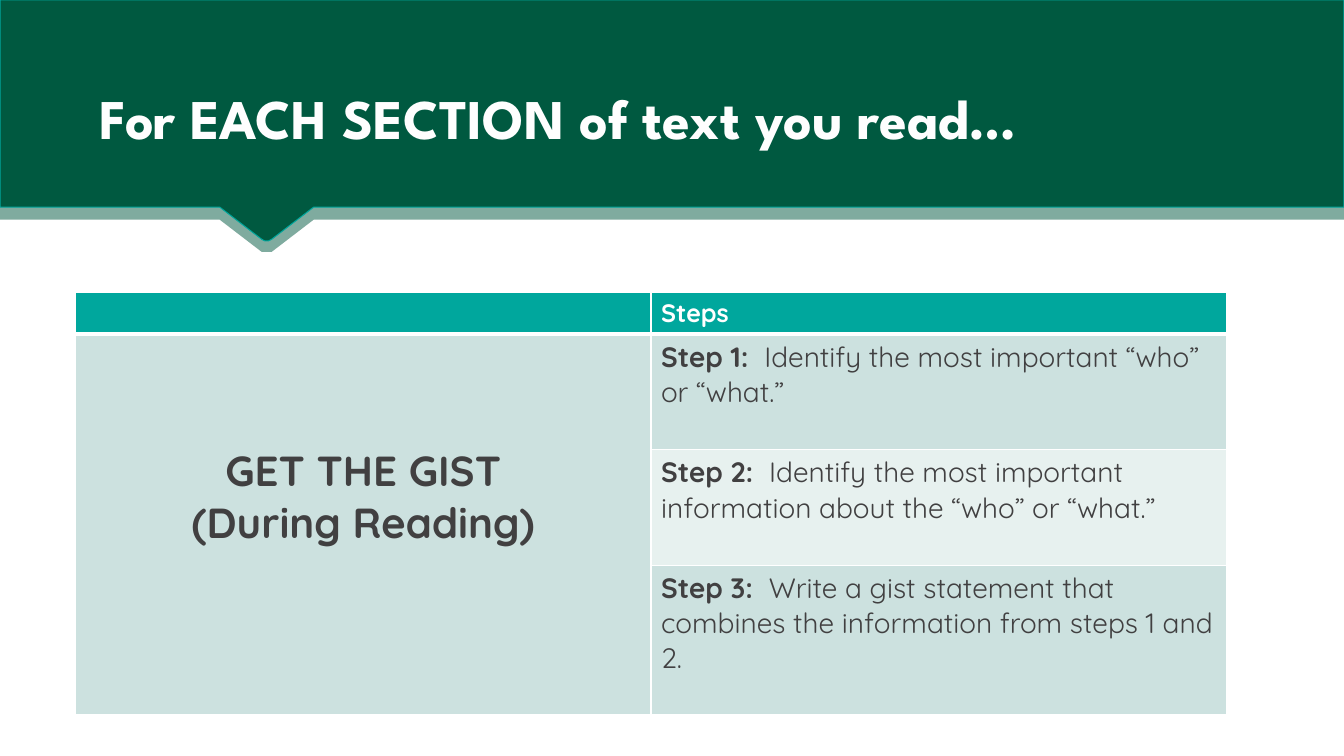
from lxml import etree
from pptx import Presentation
from pptx.dml.color import RGBColor
from pptx.enum import text
from pptx.oxml import ns
from pptx.util import Pt

GREEN, TEAL, INK, WHITE = "005940", "00A79D", "414041", "FFFFFF"
PALE, PALER = "CCE1DF", "E7F1EF"
STEPS = [
    "Identify the most important “who” or “what.”",
    "Identify the most important information about the “who” or “what.”",
    "Write a gist statement that combines the information from steps 1 and 2.",
]


def rgb(value):
    return RGBColor.from_string(value)


def add_xml(parent, tag, **attributes):
    return etree.SubElement(parent, ns.qn(tag), attributes)


def format_font(font, color, **values):
    font.color.rgb = rgb(color)
    for key, value in values.items():
        setattr(font, key, value)


def draw_banner(slide, box, color, alpha=100, outline=None):
    """Draw a full-width band with a rounded pointer below its lower edge."""
    left, top, width, height = box
    bottom, tip = top + height, top + height + 23.5
    notch = left + 190.5
    builder = slide.shapes.build_freeform(left, top, scale=Pt(1))
    builder.add_line_segments([
        (left, bottom), (notch - 33.5, bottom),
        (notch - 3.5, tip - 1), (notch - 1.2, tip), (notch + 1.2, tip),
        (notch + 3.5, tip - 1), (notch + 33.5, bottom),
        (left + width, bottom), (left + width, top),
    ])
    banner = builder.convert_to_shape()
    banner.shadow.inherit = False
    banner.fill.solid()
    banner.fill.fore_color.rgb = rgb(color)
    if alpha < 100:
        swatch = banner.fill._xPr.find(".//" + ns.qn("a:srgbClr"))
        add_xml(swatch, "a:alpha", val=str(alpha * 1000))
    if outline:
        banner.line.color.rgb = rgb(outline)
        banner.line.width = Pt(0.75)
    else:
        banner.line.fill.background()


def place_title(slide, box, wording):
    title = slide.shapes.title
    title.left, title.top, title.width, title.height = map(Pt, box)
    frame = title.text_frame
    frame.text = wording
    layout = {"vertical_anchor": text.MSO_ANCHOR.BOTTOM, "word_wrap": True,
              "auto_size": text.MSO_AUTO_SIZE.NONE}
    for key, value in layout.items():
        setattr(frame, key, value)
    heading = frame.paragraphs[0]
    heading.alignment = text.PP_ALIGN.LEFT
    run = heading.runs[0]
    format_font(run.font, "FEFEFE", name="League Spartan", size=Pt(40), bold=True)

    effects = etree.Element(ns.qn("a:effectLst"))
    shadow = add_xml(effects, "a:outerShdw", blurRad="38100", dist="38100", dir="2700000")
    add_xml(add_xml(shadow, "a:srgbClr", val="000000"), "a:alpha", val="43000")
    run.font.fill._xPr.find(ns.qn("a:solidFill")).addnext(effects)
    title._element.getparent().append(title._element)  # in front of the banner


def style_cell(cell, color, bottom=1, top=1):
    cell.fill.solid()
    cell.fill.fore_color.rgb = rgb(color)
    properties = cell._tc.get_or_add_tcPr()
    sides = {"a:lnL": 1, "a:lnR": 1, "a:lnT": top, "a:lnB": bottom}
    for position, (side, weight) in enumerate(sides.items()):
        border = etree.Element(ns.qn(side), w=str(Pt(weight)))
        add_xml(add_xml(border, "a:solidFill"), "a:srgbClr", val=WHITE)
        properties.insert(position, border)


def write_cell(cell, *parts, color=INK, size=20):
    """Write (wording, bold) parts into the first paragraph of the cell."""
    paragraph = cell.text_frame.paragraphs[0]
    for wording, bold in parts:
        run = paragraph.add_run()
        run.text = wording
        format_font(run.font, color, name="Quicksand", size=Pt(size), bold=bold)
    return paragraph


def draw_steps_table(slide, box):
    left, top, width, height = box
    row_heights = [29.5, 82.5, 82.5, height - 194.5]
    table = slide.shapes.add_table(4, 2, *map(Pt, box)).table
    table.first_row = table.horz_banding = False
    for column in table.columns:
        column.width = Pt(width / 2)
    for row, row_height in zip(table.rows, row_heights):
        row.height = Pt(row_height)

    for column in range(2):
        style_cell(table.cell(0, column), TEAL, bottom=3)
    write_cell(table.cell(0, 1), ("Steps", True), color=WHITE, size=18)

    stage = table.cell(1, 0)
    stage.merge(table.cell(3, 0))
    style_cell(stage, PALE, top=3)
    stage.margin_top = Pt(78.6)
    lines = write_cell(stage, ("GET THE GIST", True), size=30)
    lines.alignment = text.PP_ALIGN.CENTER
    lines.add_line_break()
    write_cell(stage, ("(During Reading)", True), size=30)

    for number, instruction in enumerate(STEPS, 1):
        cell = table.cell(number, 1)
        style_cell(cell, PALE if number % 2 else PALER, top=3 if number == 1 else 1)
        write_cell(cell, (f"Step {number}:  ", True), (instruction, False))


def main():
    deck = Presentation()
    deck.slide_width, deck.slide_height = Pt(960), Pt(540)
    slide = deck.slides.add_slide(deck.slide_layouts[5])
    draw_banner(slide, (0, 8.5, 960, 148.5), GREEN, alpha=50)
    draw_banner(slide, (0, 0, 960, 148.5), GREEN, outline=TEAL)
    place_title(slide, (64, 35.5, 832, 76), "For EACH SECTION of text you read…")
    draw_steps_table(slide, (54, 209, 822, 301.5))
    deck.save("out.pptx")


if __name__ == "__main__":
    main()
